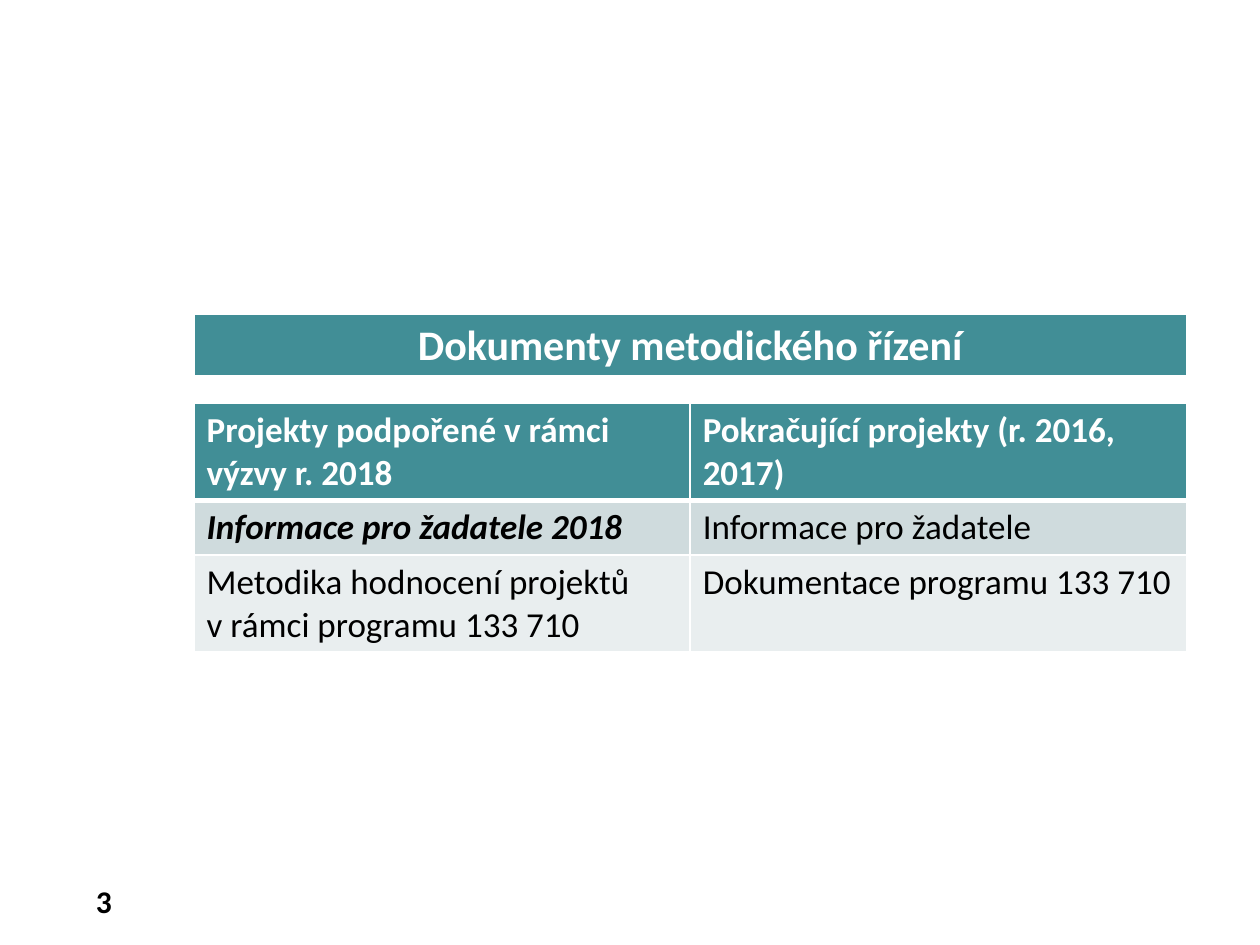
from lxml.etree import SubElement
from pptx import Presentation
from pptx.dml.color import RGBColor
from pptx.enum.text import MSO_ANCHOR, PP_ALIGN
from pptx.oxml.ns import qn
from pptx.util import Pt

COLORS = {"teal": "418E96", "band": "CFDBDD", "pale": "E9EEEF",
          "white": "FFFFFF", "black": "000000"}
LEFT, WIDTH = 110.9, 567
DOCUMENTS = [
    ["Projekty podpořené v rámci výzvy r. 2018", "Pokračující projekty (r. 2016, 2017)"],
    ["Informace pro žadatele 2018", "Informace pro žadatele"],
    ["Metodika hodnocení projektů\vv rámci programu 133 710", "Dokumentace programu 133 710"],
]


def color(name):
    return RGBColor.from_string(COLORS[name])


def set_font(para, size, shade, bold=False, italic=False):
    font = para.font
    font.name, font.size = "Calibri", Pt(size)
    font.bold, font.italic = bold, italic
    font.color.rgb = color(shade)


def set_borders(cell, bottom):
    properties = cell._tc.get_or_add_tcPr()
    for side, width in (("L", 1), ("R", 1), ("T", 1), ("B", bottom)):
        line = SubElement(properties, qn(f"a:ln{side}"), w=str(Pt(width)))
        fill = SubElement(line, qn("a:solidFill"))
        SubElement(fill, qn("a:srgbClr"), val=COLORS["white"])


def add_grid(page, top, heights, rows, fills, size):
    """Add a table with a white-on-teal header row; return it."""
    columns = len(rows[0])
    table = page.shapes.add_table(len(rows), columns, Pt(LEFT), Pt(top),
                                  Pt(WIDTH), Pt(sum(heights))).table
    for column in table.columns:
        column.width = Pt(WIDTH / columns)
    for index, (row, height, texts, fill) in enumerate(
            zip(table.rows, heights, rows, fills)):
        row.height = Pt(height)
        header = index == 0
        for cell, text in zip(row.cells, texts):
            cell.text = text
            set_borders(cell, 3 if header else 1)
            cell.fill.solid()
            cell.fill.fore_color.rgb = color(fill)
            set_font(cell.text_frame.paragraphs[0], size,
                     "white" if header else "black", bold=header)
    return table


def add_page_number(page, number):
    box = page.shapes.add_textbox(Pt(20), Pt(500.4), Pt(51), Pt(28.8))
    frame = box.text_frame
    frame.word_wrap = True
    frame.vertical_anchor = MSO_ANCHOR.MIDDLE
    para = frame.paragraphs[0]
    para.text = number
    para.alignment = PP_ALIGN.RIGHT
    set_font(para, 18, "black", bold=True)


def main():
    deck = Presentation()
    deck.slide_width, deck.slide_height = Pt(720), Pt(540)
    page = deck.slides.add_slide(deck.slide_layouts[6])

    add_page_number(page, "3")

    # Documents by project group, with the new guide emphasised
    documents = add_grid(page, 230.4, [55.5, 31.2, 55.5], DOCUMENTS,
                         ["teal", "band", "pale"], 20)
    set_font(documents.cell(1, 0).text_frame.paragraphs[0], 20, "black",
             bold=True, italic=True)

    # Heading bar
    heading = add_grid(page, 179.4, [36], [["Dokumenty metodického řízení"]],
                       ["teal"], 24)
    heading.cell(0, 0).text_frame.paragraphs[0].alignment = PP_ALIGN.CENTER

    deck.save("out.pptx")


if __name__ == "__main__":
    main()
